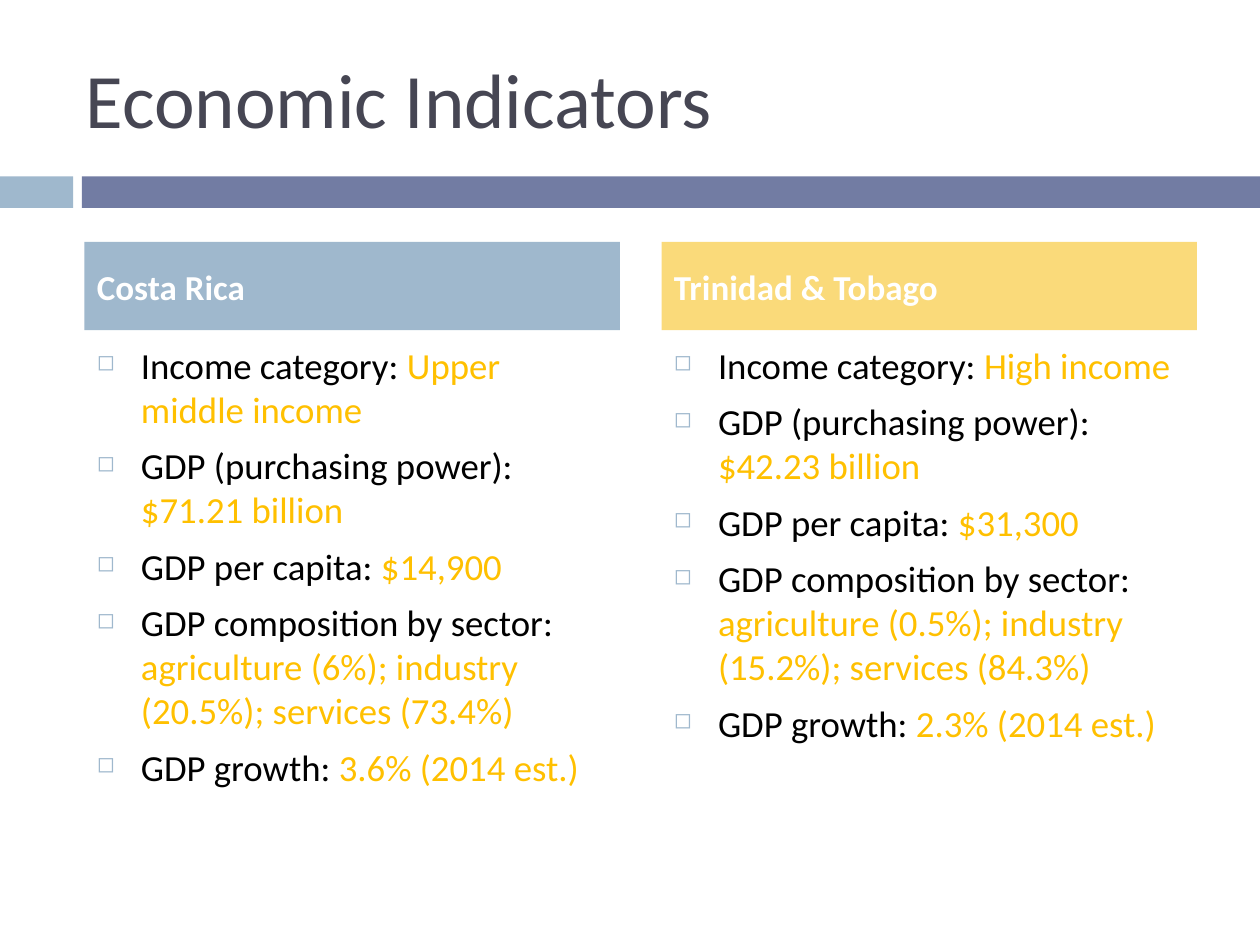
from lxml import etree
from pptx import Presentation
from pptx import util as u
from pptx.dml.color import RGBColor
from pptx.enum import shapes, text
from pptx.oxml.ns import qn

BLUE = RGBColor(0x9F, 0xB8, 0xCD)
VIOLET = RGBColor(0x72, 0x7C, 0xA3)
YELLOW = RGBColor(0xFA, 0xDA, 0x7A)
GOLD = RGBColor(0xFF, 0xC0, 0x00)
SLATE = RGBColor(0x46, 0x46, 0x53)
BLACK = RGBColor(0, 0, 0)
WHITE = RGBColor(0xFF, 0xFF, 0xFF)

prs = Presentation()
prs.slide_width, prs.slide_height = u.Inches(10), u.Inches(7.5)
slide = prs.slides.add_slide(prs.slide_layouts[5])


def add_bar(left, top, width, height, color):
    bar = slide.shapes.add_shape(
        shapes.MSO_SHAPE.RECTANGLE,
        u.Inches(left), u.Inches(top), u.Inches(width), u.Inches(height))
    bar.shadow.inherit = False
    bar.fill.solid()
    bar.fill.fore_color.rgb = color
    bar.line.fill.background()
    return bar


def add_run(para, words, size, color, bold=False):
    run = para.add_run()
    run.text = words
    run.font.name = "Calibri"
    run.font.size = u.Pt(size)
    run.font.bold = bold
    run.font.color.rgb = color


# Band below the title
add_bar(0, 1.4, 0.58, 0.25, BLUE)
add_bar(0.65, 1.4, 9.35, 0.25, VIOLET)

# Title
title = slide.shapes.title
title.left, title.top = u.Inches(0.58), u.Inches(0.3)
title.width, title.height = u.Inches(8.92), u.Inches(0.95)
title.text_frame.vertical_anchor = text.MSO_ANCHOR.MIDDLE
para = title.text_frame.paragraphs[0]
para.alignment = text.PP_ALIGN.LEFT
add_run(para, "Economic Indicators", 44, SLATE)

# One column per country: heading bar and bulleted facts
labels = ["Income category: ", "GDP (purchasing power): ", "GDP per capita: ",
          "GDP composition by sector: ", "GDP growth: "]
columns = [
    (0.67, "Costa Rica", BLUE,
     ["Upper middle income", "$71.21 billion", "$14,900",
      "agriculture (6%); industry (20.5%); services (73.4%)",
      "3.6% (2014 est.)"]),
    (5.25, "Trinidad & Tobago", YELLOW,
     ["High income", "$42.23 billion", "$31,300",
      "agriculture (0.5%); industry (15.2%); services (84.3%)",
      "2.3% (2014 est.)"]),
]
for left, country, color, facts in columns:
    head = add_bar(left, 1.92, 4.25, 0.7, color)
    head.text_frame.vertical_anchor = text.MSO_ANCHOR.MIDDLE
    para = head.text_frame.paragraphs[0]
    para.alignment = text.PP_ALIGN.LEFT
    para.space_before = u.Pt(7)
    add_run(para, country, 20, WHITE, bold=True)

    body = slide.shapes.add_textbox(
        u.Inches(left), u.Inches(2.67), u.Inches(4.25), u.Inches(3.92))
    frame = body.text_frame
    frame.word_wrap = True
    for i, (label, fact) in enumerate(zip(labels, facts)):
        para = frame.paragraphs[0] if i == 0 else frame.add_paragraph()
        para.space_before = u.Pt(7)
        # Hanging indent and small square bullet
        props = para._p.get_or_add_pPr()
        props.set("marL", str(u.Inches(0.35)))
        props.set("indent", str(-u.Inches(0.35)))
        tint = etree.SubElement(props, qn("a:buClr"))
        etree.SubElement(tint, qn("a:srgbClr"), val=str(BLUE))
        etree.SubElement(props, qn("a:buSzPct"), val="60000")
        etree.SubElement(props, qn("a:buChar"), char="◻")
        add_run(para, label, 21, BLACK)
        add_run(para, fact, 21, GOLD)

prs.save("out.pptx")
